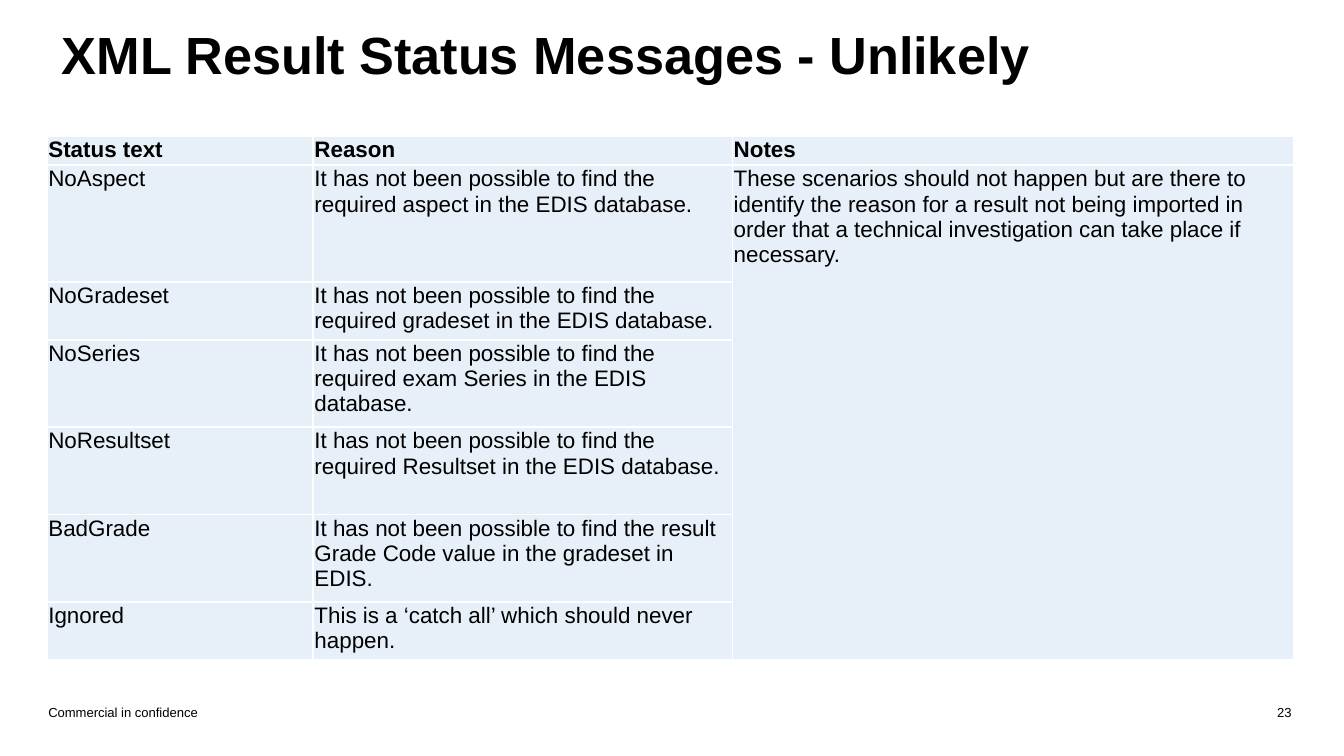
from dataclasses import dataclass

from pptx import Presentation
from pptx.dml.color import RGBColor
from pptx.enum.text import MSO_ANCHOR, MSO_AUTO_SIZE, PP_ALIGN
from pptx.oxml.ns import qn
from pptx.util import Inches, Pt
from lxml.etree import SubElement


@dataclass(frozen=True)
class Theme:
    font: str = "Arial"
    ink: RGBColor = RGBColor(0x00, 0x00, 0x00)
    cell: RGBColor = RGBColor(0xE7, 0xF0, 0xF8)
    border: str = "FFFFFF"
    title: Pt = Pt(28)
    body: Pt = Pt(12)
    footer: Pt = Pt(7)


THEME = Theme()

STATUSES = [
    ("Status text", "Reason", 0.22),
    ("NoAspect", "It has not been possible to find the required aspect in the EDIS database.", 0.87),
    ("NoGradeset", "It has not been possible to find the required gradeset in the EDIS database.", 0.43),
    ("NoSeries", "It has not been possible to find the required exam Series in the EDIS database.", 0.65),
    ("NoResultset", "It has not been possible to find the required Resultset in the EDIS database.", 0.65),
    ("BadGrade", "It has not been possible to find the result Grade Code value in the gradeset in EDIS.", 0.65),
    ("Ignored", "This is a ‘catch all’ which should never happen.", 0.43),
]
NOTES = [
    "Notes",
    "These scenarios should not happen but are there to identify the reason for a result "
    "not being imported in order that a technical investigation can take place if necessary.",
]
COLUMN_WIDTHS = [1.98, 3.12, 4.18]


def add_span(para, text, size, bold=False):
    span = para.add_run()
    span.text = text
    span.font.name = THEME.font
    span.font.size = size
    span.font.bold = bold
    span.font.color.rgb = THEME.ink


def add_borders(cell):
    properties = cell._tc.get_or_add_tcPr()
    for side in ("a:lnL", "a:lnR", "a:lnT", "a:lnB"):
        line = SubElement(properties, qn(side), w=str(Pt(1)))
        fill = SubElement(line, qn("a:solidFill"))
        SubElement(fill, qn("a:srgbClr"), val=THEME.border)


deck = Presentation()
deck.slide_width = Inches(10)
deck.slide_height = Inches(10 * 9 / 16)
page = deck.slides.add_slide(deck.slide_layouts[5])

# Title
title = page.shapes.title
title.left, title.top = Inches(0.36), Inches(0.09)
title.width, title.height = Inches(9.25), Inches(0.6)
frame = title.text_frame
frame.auto_size = MSO_AUTO_SIZE.NONE
frame.vertical_anchor = MSO_ANCHOR.BOTTOM
para = frame.paragraphs[0]
para.alignment = PP_ALIGN.LEFT
para.line_spacing = 0.9
add_span(para, "XML Result Status Messages - Unlikely", THEME.title, bold=True)

# Status table
table = page.shapes.add_table(
    len(STATUSES), len(COLUMN_WIDTHS), Inches(0.35), Inches(1.01),
    Inches(sum(COLUMN_WIDTHS)), Inches(sum(height for *_, height in STATUSES)),
).table
table.first_row = table.horz_banding = False
for column, width in zip(table.columns, COLUMN_WIDTHS):
    column.width = Inches(width)

for row_index, (status, reason, height) in enumerate(STATUSES):
    table.rows[row_index].height = Inches(height)
    note = NOTES[row_index] if row_index < len(NOTES) else ""
    for column_index, text in enumerate((status, reason, note)):
        cell = table.cell(row_index, column_index)
        cell.margin_left = cell.margin_right = cell.margin_top = Inches(0.01)
        cell.margin_bottom = 0
        add_borders(cell)
        cell.fill.solid()
        cell.fill.fore_color.rgb = THEME.cell
        if text:
            add_span(cell.text_frame.paragraphs[0], text, THEME.body, bold=row_index == 0)
table.cell(1, 2).merge(table.cell(len(STATUSES) - 1, 2))

# Footer
for text, left, width, alignment in (
    ("Commercial in confidence", 0.36, 4.5, PP_ALIGN.LEFT),
    ("23", 9.24, 0.37, PP_ALIGN.RIGHT),
):
    box = page.shapes.add_textbox(Inches(left), Inches(5.24), Inches(width), Inches(0.12))
    frame = box.text_frame
    frame.word_wrap = True
    frame.vertical_anchor = MSO_ANCHOR.MIDDLE
    frame.margin_left = frame.margin_right = frame.margin_top = frame.margin_bottom = 0
    frame.paragraphs[0].alignment = alignment
    add_span(frame.paragraphs[0], text, THEME.footer)

deck.save("out.pptx")
